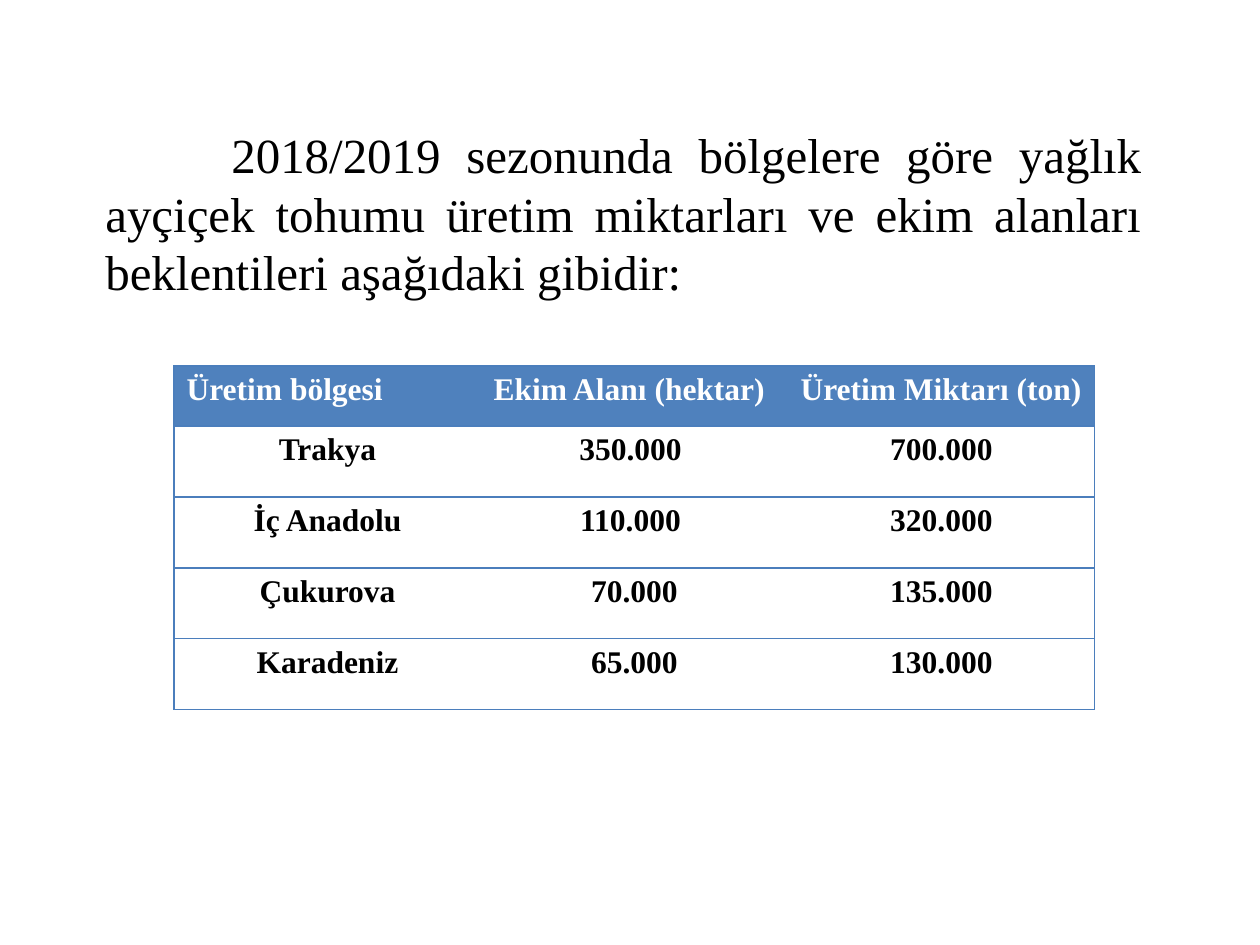
"""Build the slide on regional sunflower seed expectations for 2018/2019."""
from pptx import Presentation
from pptx.dml.color import RGBColor
from pptx.enum.text import MSO_ANCHOR, PP_ALIGN as Align
from pptx.oxml.ns import qn
from pptx.util import Pt
from lxml.etree import SubElement

INTRO = ("2018/2019 sezonunda bölgelere göre yağlık ayçiçek tohumu üretim "
         "miktarları ve ekim alanları beklentileri aşağıdaki gibidir: ")
HEADINGS = ("Üretim bölgesi", "Ekim Alanı (hektar)", "Üretim Miktarı (ton)")
REGIONS = [
    ("Trakya", "350.000 ", "700.000"),
    ("İç Anadolu", "110.000 ", "320.000"),
    ("Çukurova", "70.000", "135.000"),
    ("Karadeniz", "65.000", "130.000"),
]

BLACK = RGBColor(0x00, 0x00, 0x00)
WHITE = RGBColor(0xFF, 0xFF, 0xFF)
HEADER_BLUE = RGBColor(0x4F, 0x81, 0xBD)
BORDER_BLUE = RGBColor(0x4B, 0x7E, 0xBC)
FONT = "Times New Roman"
INTRO_FORMAT = {"name": FONT, "size": Pt(28), "color": BLACK}
HEADER_FORMAT = {"name": FONT, "size": Pt(18), "bold": True, "color": WHITE}
BODY_FORMAT = {**HEADER_FORMAT, "color": BLACK}

SLIDE_SIZE = (1260, 945)
INTRO_BOX = (93, 118, 1061, 190)
FIRST_LINE_INDENT = 126
TABLE_LEFT, TABLE_TOP = 174, 366
COLUMN_WIDTH, HEADER_HEIGHT, ROW_HEIGHT = 307, 60, 71


def px(length):
    return length * 914400 // 126


def write(paragraph, text, formats, alignment):
    paragraph.alignment = alignment
    run = paragraph.add_run()
    run.text = text
    for attribute, value in formats.items():
        if attribute == "color":
            run.font.color.rgb = value
        else:
            setattr(run.font, attribute, value)


def draw_borders(cell, visible):
    properties = cell._tc.get_or_add_tcPr()
    for side in "LRTB":
        line = SubElement(properties, qn(f"a:ln{side}"), w=str(Pt(0.75)))
        if side in visible:
            paint = SubElement(line, qn("a:solidFill"))
            SubElement(paint, qn("a:srgbClr"), val=str(BORDER_BLUE))
        else:
            SubElement(line, qn("a:noFill"))


def add_intro(slide):
    frame = slide.shapes.add_textbox(*map(px, INTRO_BOX)).text_frame
    frame.word_wrap = True
    paragraph = frame.paragraphs[0]
    write(paragraph, INTRO, INTRO_FORMAT, Align.JUSTIFY)
    paragraph._p.get_or_add_pPr().set("indent", str(px(FIRST_LINE_INDENT)))


def add_regions(slide):
    rows = [HEADINGS, *REGIONS]
    last = len(HEADINGS) - 1
    size = (COLUMN_WIDTH * len(HEADINGS), HEADER_HEIGHT + ROW_HEIGHT * len(REGIONS))
    table = slide.shapes.add_table(
        len(rows), len(HEADINGS), *map(px, (TABLE_LEFT, TABLE_TOP, *size))).table
    table.horz_banding = False
    for column in table.columns:
        column.width = px(COLUMN_WIDTH)
    for r, values in enumerate(rows):
        header = r == 0
        table.rows[r].height = px(HEADER_HEIGHT if header else ROW_HEIGHT)
        for c, value in enumerate(values):
            cell = table.cell(r, c)
            cell.vertical_anchor = MSO_ANCHOR.TOP
            draw_borders(cell, "TB" + "L" * (c == 0) + "R" * (c == last))
            if header:
                cell.fill.solid()
                cell.fill.fore_color.rgb = HEADER_BLUE
            else:
                cell.fill.background()
            write(cell.text_frame.paragraphs[0], value,
                  HEADER_FORMAT if header else BODY_FORMAT,
                  Align.LEFT if header else Align.CENTER)


def main():
    deck = Presentation()
    deck.slide_width, deck.slide_height = map(px, SLIDE_SIZE)
    slide = deck.slides.add_slide(deck.slide_layouts[6])
    add_intro(slide)
    add_regions(slide)
    deck.save("out.pptx")


if __name__ == "__main__":
    main()
